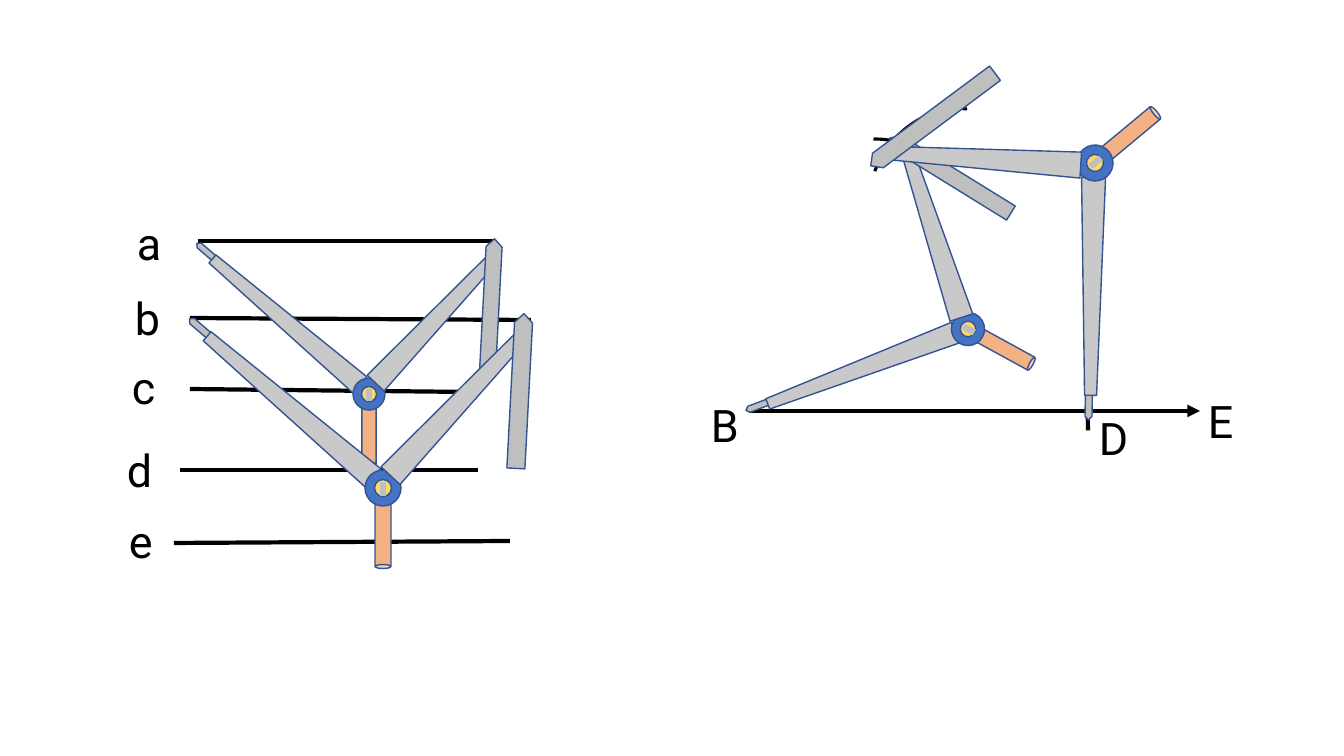
from math import cos, radians, sin

from lxml import etree
from pptx import Presentation
from pptx.dml.color import RGBColor
from pptx.enum.shapes import MSO_CONNECTOR, MSO_SHAPE
from pptx.enum.text import MSO_AUTO_SIZE
from pptx.oxml.ns import qn
from pptx.util import Emu, Pt

THEME = {
    "font": "Roboto",
    "label_size": 32,
    "ink": "000000",
    "outline": "325491",
    "tip": "BFBFBF",
    "leg": "C9C9C9",
    "handle": "F4B183",
    "hinge": "4472C4",
    "screw": "FFD966",
}
EMU_PER_PX = 914400 / 100.8


def px(*lengths):
    return [Emu(round(length * EMU_PER_PX)) for length in lengths]


def add_line(shapes, ends, color, width):
    line = shapes.add_connector(MSO_CONNECTOR.STRAIGHT, *px(*ends))
    line.line.color.rgb = RGBColor.from_string(THEME[color])
    line.line.width = Pt(width)
    etree.SubElement(line._element.spPr, qn("a:effectLst"))
    return line


presentation = Presentation()
presentation.slide_width, presentation.slide_height = px(1344, 756)
slide = presentation.slides.add_slide(presentation.slide_layouts[6])

# Level lines a to e
level_lines = [
    (198, 241, 495, 241),
    (190, 318, 531, 320),
    (190, 389, 468, 392),
    (180, 470, 478, 470),
    (174, 543, 510, 541),
]
for ends in level_lines:
    add_line(slide.shapes, ends, "ink", 3)

# Ray from B to E
ray = add_line(slide.shapes, (749, 411, 1200, 411), "ink", 3)
arrowhead = etree.SubElement(ray.line._get_or_add_ln(), qn("a:tailEnd"))
arrowhead.set("type", "triangle")

# Compass parts, laid out around the hinge: shape, centre, size, angle, fill
compass_parts = [
    (MSO_SHAPE.PENTAGON, (-170, -149), (62, 7), 220.7, "tip"),
    (MSO_SHAPE.TRAPEZOID, (-93, -81), (24, 218), 310.5, "leg"),
    (MSO_SHAPE.CAN, (0, 45), (16, 71), 180, "handle"),
    (MSO_SHAPE.OVAL, (0, 0), (36, 36), 180, "hinge"),
    (MSO_SHAPE.TRAPEZOID, (75, -84), (26, 197), 43.3, "leg"),
    (MSO_SHAPE.PENTAGON, (137, -97), (155, 18), 273, "tip"),
    (MSO_SHAPE.OVAL, (0, 0), (17, 17), 180, "screw"),
]
screw_slot = [(0, 8), (0, -6)]

# Arcs: box, rotation, end angle, width
arcs = [
    ((779, 139, 189, 165), 0, 337.84, 2.25),
    ((1083, 383, 5, 95), 0, 360, 3),
    ((857, 119, 189, 165), 291.6, 348.02, 2.25),
]
# Compasses: hinge, scale, turn
compasses = [
    ((369, 394), 0.89, 0),
    ((968, 329), 0.92, -61.3),
    ((383, 488), 1, 0),
    ((1095, 163), 1, -129.7),
]

# Each layer holds some arcs below some compasses
layers = [(arcs[:2], compasses[:2]), (arcs[2:], compasses[2:])]
for layer_arcs, layer_compasses in layers:
    for box, rotation, end_angle, width in layer_arcs:
        arc = slide.shapes.add_shape(MSO_SHAPE.ARC, *px(*box))
        arc.adjustments[0] = 270 * 0.6
        arc.adjustments[1] = end_angle % 360 * 0.6
        arc.rotation = rotation
        arc.shadow.inherit = False
        arc.fill.background()
        arc.line.color.rgb = RGBColor.from_string(THEME["ink"])
        arc.line.width = Pt(width)

    for (hinge_x, hinge_y), scale, turn in layer_compasses:
        compass = slide.shapes.add_group_shape()
        across, down = scale * cos(radians(turn)), scale * sin(radians(turn))
        for kind, (x, y), size, angle, fill in compass_parts:
            center_x = hinge_x + x * across - y * down
            center_y = hinge_y + x * down + y * across
            width, height = [scale * side for side in size]
            part = compass.shapes.add_shape(
                kind, *px(center_x - width / 2, center_y - height / 2, width, height)
            )
            part.rotation = (angle + turn) % 360
            part.shadow.inherit = False
            part.fill.solid()
            part.fill.fore_color.rgb = RGBColor.from_string(THEME[fill])
            part.line.color.rgb = RGBColor.from_string(THEME["outline"])
            part.line.width = Pt(1)
        slot_ends = []
        for x, y in screw_slot:
            slot_ends += [hinge_x + x * across - y * down, hinge_y + x * down + y * across]
        add_line(compass.shapes, slot_ends, "tip", 4.5)

# Labels
labels = [
    ("a", 127, 211),
    ("b", 125, 286),
    ("c", 122, 355),
    ("d", 117, 438),
    ("e", 119, 509),
    ("B", 701, 393),
    ("E", 1198, 389),
    ("D", 1089, 406),
]
for letter, left, top in labels:
    label = slide.shapes.add_textbox(*px(left, top, 41, 65))
    text_frame = label.text_frame
    text_frame.word_wrap = True
    text_frame.auto_size = MSO_AUTO_SIZE.SHAPE_TO_FIT_TEXT
    text_frame.text = letter
    font = text_frame.paragraphs[0].runs[0].font
    font.name = THEME["font"]
    font.size = Pt(THEME["label_size"])
    font.color.rgb = RGBColor.from_string(THEME["ink"])

presentation.save("out.pptx")
